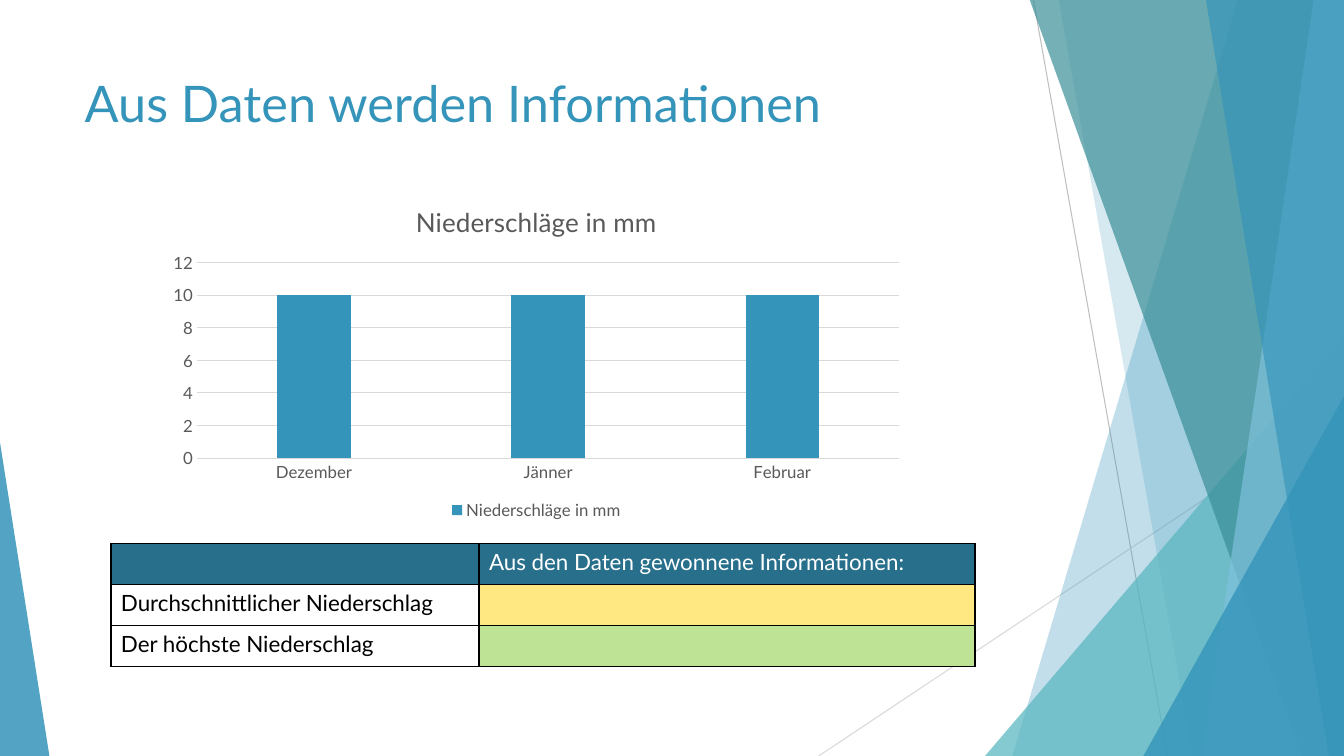
from lxml.etree import SubElement
from pptx import Presentation
from pptx.chart.data import CategoryChartData
from pptx.dml.color import RGBColor
from pptx.enum.chart import XL_CHART_TYPE, XL_LEGEND_POSITION, XL_TICK_MARK
from pptx.enum.shapes import MSO_CONNECTOR, MSO_SHAPE
from pptx.enum.text import MSO_ANCHOR, PP_ALIGN
from pptx.oxml.ns import qn
from pptx.util import Inches, Pt

FONT = "Lato"
COLORS = {
    "blue": "3494BA", "teal": "58B6C0", "dark_teal": "3A8F98", "sky": "7FC1DB",
    "header": "276F8B", "yellow": "FFE781", "green": "BEE395", "text": "595959",
    "grid": "D9D9D9", "line": "BFBFBF", "black": "000000", "white": "FFFFFF",
}


def rgb(name):
    return RGBColor.from_string(COLORS[name])


def style_font(font, size, color):
    font.name = FONT
    font.size = Pt(size)
    font.bold = False
    font.color.rgb = rgb(color)


prs = Presentation()
prs.slide_width, prs.slide_height = Inches(13.33), Inches(7.5)
s = prs.slides.add_slide(prs.slide_layouts[5])

for x1, y1, x2, y2, color in [
    (10.25, 0, 11.58, 7.5, "line"),
    (13.33, 4.03, 8.12, 7.5, "grid"),
]:
    line = s.shapes.add_connector(
        MSO_CONNECTOR.STRAIGHT, Inches(x1), Inches(y1), Inches(x2), Inches(y2))
    line.line.color.rgb = rgb(color)
    line.line.width = Pt(0.75)
    SubElement(line._element.spPr, qn("a:effectLst"))

facets = [
    ("band", (12.28, 13.33, 10.04), "blue", 30),
    ("band", (10.5, 13.33, 11.83), "blue", 20),
    ("triangle", (9.77, 3.33, 3.56, 4.17, 1), "teal", 72),
    ("band", (10.21, 13.33, 12.91), "dark_teal", 70),
    ("band", (13.03, 13.33, 11.92), "sky", 70),
    ("band", (11.96, 13.33, 13.18), "blue", 65),
    ("triangle", (11.34, 3.93, 1.99, 3.57, 1), "blue", 80),
    ("triangle", (0, 4.39, 0.49, 3.11, 0), "blue", 85),
]
for kind, geometry, color, opacity in facets:
    if kind == "band":
        top_left, right, bottom_left = [Inches(x) for x in geometry]
        top, bottom = Inches(-0.01), Inches(7.5)
        builder = s.shapes.build_freeform(top_left, top)
        builder.add_line_segments([(right, top), (right, bottom), (bottom_left, bottom)])
        sp = builder.convert_to_shape()
    else:
        *box, apex = geometry
        sp = s.shapes.add_shape(MSO_SHAPE.ISOSCELES_TRIANGLE, *[Inches(v) for v in box])
        sp.adjustments[0] = apex
    sp.shadow.inherit = False
    sp.line.fill.background()
    sp.fill.solid()
    sp.fill.fore_color.rgb = rgb(color)
    fill_color = sp._element.spPr.find(qn("a:solidFill"))[0]
    SubElement(fill_color, qn("a:alpha")).set("val", str(opacity * 1000))

title = s.shapes.title
title.left, title.top = Inches(0.74), Inches(0.67)
title.width, title.height = Inches(9.4), Inches(1.44)
tf = title.text_frame
tf.text = "Aus Daten werden Informationen"
tf.vertical_anchor = MSO_ANCHOR.TOP
p = tf.paragraphs[0]
p.alignment = PP_ALIGN.LEFT
style_font(p.runs[0].font, 36, "blue")

data = CategoryChartData()
data.categories = ["Dezember", "Jänner", "Februar"]
data.add_series("Niederschläge in mm", (10, 10, 10))
chart = s.shapes.add_chart(
    XL_CHART_TYPE.COLUMN_CLUSTERED,
    Inches(1.57), Inches(1.85), Inches(7.5), Inches(3.35), data).chart
style_font(chart.font, 12, "text")
chart.has_title = True
tf = chart.chart_title.text_frame
tf.text = "Niederschläge in mm"
style_font(tf.paragraphs[0].runs[0].font, 18.6, "text")
chart.chart_title.include_in_layout = False
chart.has_legend = True
chart.legend.position = XL_LEGEND_POSITION.BOTTOM
chart.legend.include_in_layout = False
style_font(chart.legend.font, 12, "text")

plot = chart.plots[0]
plot.gap_width = 219
plot.overlap = -27
plot.vary_by_categories = False
bars = plot.series[0]
bars.format.fill.solid()
bars.format.fill.fore_color.rgb = rgb("blue")

months, amounts = chart.category_axis, chart.value_axis
for axis in (months, amounts):
    axis.major_tick_mark = axis.minor_tick_mark = XL_TICK_MARK.NONE
    style_font(axis.tick_labels.font, 12, "text")
amounts.minimum_scale, amounts.maximum_scale, amounts.major_unit = 0, 12, 2
amounts.format.line.fill.background()
for line in (months.format.line, amounts.major_gridlines.format.line):
    line.color.rgb = rgb("grid")
    line.width = Pt(0.75)

rows = [
    [("", "header"), ("Aus den Daten gewonnene Informationen:", "header")],
    [("Durchschnittlicher Niederschlag", None), ("", "yellow")],
    [("Der höchste Niederschlag", None), ("", "green")],
]
table = s.shapes.add_table(
    3, 2, Inches(1.1), Inches(5.39), Inches(8.57), Inches(1.22)).table
table.columns[0].width, table.columns[1].width = Inches(3.65), Inches(4.92)
for i, row in enumerate(rows):
    for j, (text, fill) in enumerate(row):
        cell = table.cell(i, j)
        cell.text = text
        p = cell.text_frame.paragraphs[0]
        style_font(p.font, 16, "black")
        for r in p.runs:
            style_font(r.font, 16, "white" if i == 0 else "black")
        tcPr = cell._tc.get_or_add_tcPr()
        for side in ("lnL", "lnR", "lnT", "lnB"):
            border = SubElement(tcPr, qn(f"a:{side}"), w=str(Pt(1)))
            border_fill = SubElement(border, qn("a:solidFill"))
            SubElement(border_fill, qn("a:srgbClr"), val=COLORS["black"])
        if fill:
            cell.fill.solid()
            cell.fill.fore_color.rgb = rgb(fill)
        else:
            cell.fill.background()

prs.save("out.pptx")
